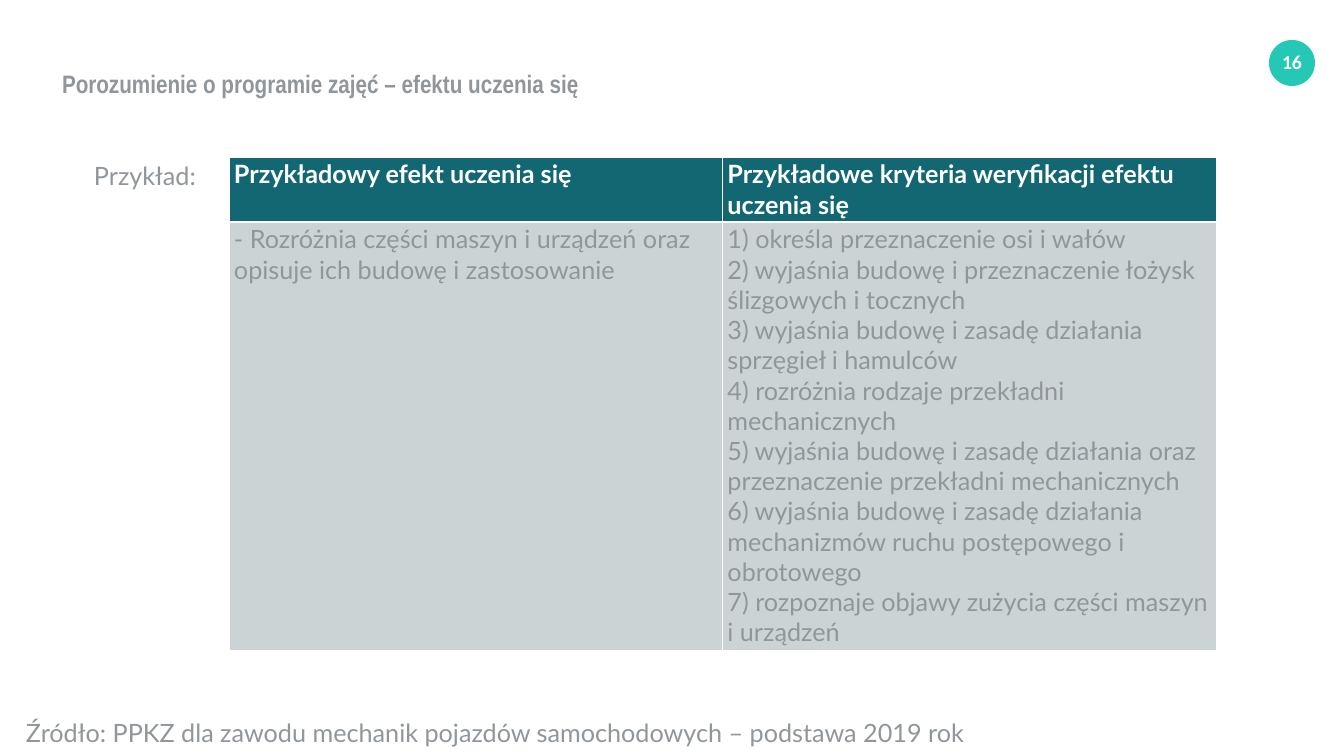
from lxml import etree
from pptx import Presentation
from pptx.dml.color import RGBColor
from pptx.enum.shapes import MSO_SHAPE as SHAPE
from pptx.enum.text import MSO_ANCHOR as ANCHOR, MSO_AUTO_SIZE as AUTO, PP_ALIGN as ALIGN
from pptx.oxml import parse_xml
from pptx.oxml.ns import nsdecls
from pptx.util import Pt

SCALE = 914400 / 50.4
WHITE = RGBColor(0xFF, 0xFF, 0xFF)
GREY = RGBColor(0x91, 0x96, 0x9B)
MINT = RGBColor(0x25, 0xC8, 0xB4)
TEAL = RGBColor(0x13, 0x67, 0x73)
PALE = RGBColor(0xCC, 0xD3, 0xD5)

HEADERS = ["Przykładowy efekt uczenia się",
           "Przykładowe kryteria weryfikacji efektu uczenia się"]
EFFECT = "- Rozróżnia części maszyn i urządzeń oraz opisuje ich budowę i zastosowanie"
CRITERIA = [
    "1) określa przeznaczenie osi i wałów",
    "2) wyjaśnia budowę i przeznaczenie łożysk",
    "ślizgowych i tocznych",
    "3) wyjaśnia budowę i zasadę działania sprzęgieł i hamulców",
    "4) rozróżnia rodzaje przekładni mechanicznych",
    "5) wyjaśnia budowę i zasadę działania oraz przeznaczenie przekładni mechanicznych",
    "6) wyjaśnia budowę i zasadę działania mechanizmów ruchu postępowego i obrotowego",
    "7) rozpoznaje objawy zużycia części maszyn i urządzeń",
]


def px(n):
    return round(n * SCALE)


def write(tf, text, size=36, font="Lato", color=GREY, bold=False, align=ALIGN.LEFT):
    tf.text = text
    for p in tf.paragraphs:
        p.alignment = align
        for r in p.runs:
            r.font.size = Pt(size)
            r.font.name = font
            r.font.bold = bold
            r.font.color.rgb = color


def set_frame(tf, margins=(5, 3, 5, 3), wrap=True):
    tf.word_wrap = wrap
    tf.auto_size = AUTO.NONE
    tf.vertical_anchor = ANCHOR.TOP
    tf.margin_left, tf.margin_top, tf.margin_right, tf.margin_bottom = map(px, margins)


def add_title(slide, box, text):
    title = slide.shapes.title
    title.left, title.top, title.width, title.height = map(px, box)
    set_frame(title.text_frame)
    write(title.text_frame, text, font="Arial Narrow", bold=True)


def add_text(slide, box, text, margins=(5, 3, 5, 3), wrap=True, **fmt):
    tf = slide.shapes.add_textbox(*map(px, box)).text_frame
    set_frame(tf, margins, wrap)
    write(tf, text, **fmt)


def add_page_number(slide, text):
    sp = slide.shapes.add_shape(SHAPE.OVAL, *map(px, (1269, 40, 46, 46)))
    sp.shadow.inherit = False
    sp.fill.solid()
    sp.fill.fore_color.rgb = MINT
    sp.line.fill.background()
    add_text(slide, (1270, 45, 44, 34), text, margins=(10, 5, 10, 5), wrap=False,
             size=28, font="Calibri", color=WHITE, bold=True, align=ALIGN.CENTER)


def set_borders(cell, **widths):
    tc_pr = cell._tc.get_or_add_tcPr()
    for i, (side, width) in enumerate(widths.items()):
        ln = parse_xml(f'<a:ln{side} {nsdecls("a")} w="{Pt(width)}"/>')
        fill = etree.SubElement(ln, ln.tag.replace(f"ln{side}", "solidFill"))
        etree.SubElement(fill, fill.tag.replace("solidFill", "srgbClr"), val=str(WHITE))
        tc_pr.insert(i, ln)


def fill_cell(cell, text, fill, top, bottom, **fmt):
    cell.fill.solid()
    cell.fill.fore_color.rgb = fill
    set_borders(cell, L=1, R=1, T=top, B=bottom)
    cell.margin_left = cell.margin_right = px(5)
    cell.margin_top = cell.margin_bottom = px(2)
    write(cell.text_frame, text, **fmt)


def add_effects_table(slide):
    heights = (65, 428)
    box = (229, 157, 987, sum(heights))
    table = slide.shapes.add_table(2, 2, *map(px, box)).table
    table.horz_banding = False
    for row, height in zip(table.rows, heights):
        row.height = px(height)
    for col, text in enumerate(HEADERS):
        fill_cell(table.cell(0, col), text, TEAL, 1, 3, color=WHITE, bold=True)
    for col, text in enumerate([EFFECT, "\n".join(CRITERIA)]):
        fill_cell(table.cell(1, col), text, PALE, 3, 1)


def main():
    prs = Presentation()
    prs.slide_width, prs.slide_height = px(1344), px(756)
    slide = prs.slides.add_slide(prs.slide_layouts[5])
    add_page_number(slide, "16")
    add_title(slide, (57, 65, 646, 36), "Porozumienie o programie zajęć – efektu uczenia się")
    add_text(slide, (89, 127, 1110, 97), "Przykład:", margins=(5, 33, 5, 3))
    add_effects_table(slide)
    add_text(slide, (21, 714, 969, 36),
             "Źródło: PPKZ dla zawodu mechanik pojazdów samochodowych – podstawa 2019 rok")
    prs.save("out.pptx")


if __name__ == "__main__":
    main()
